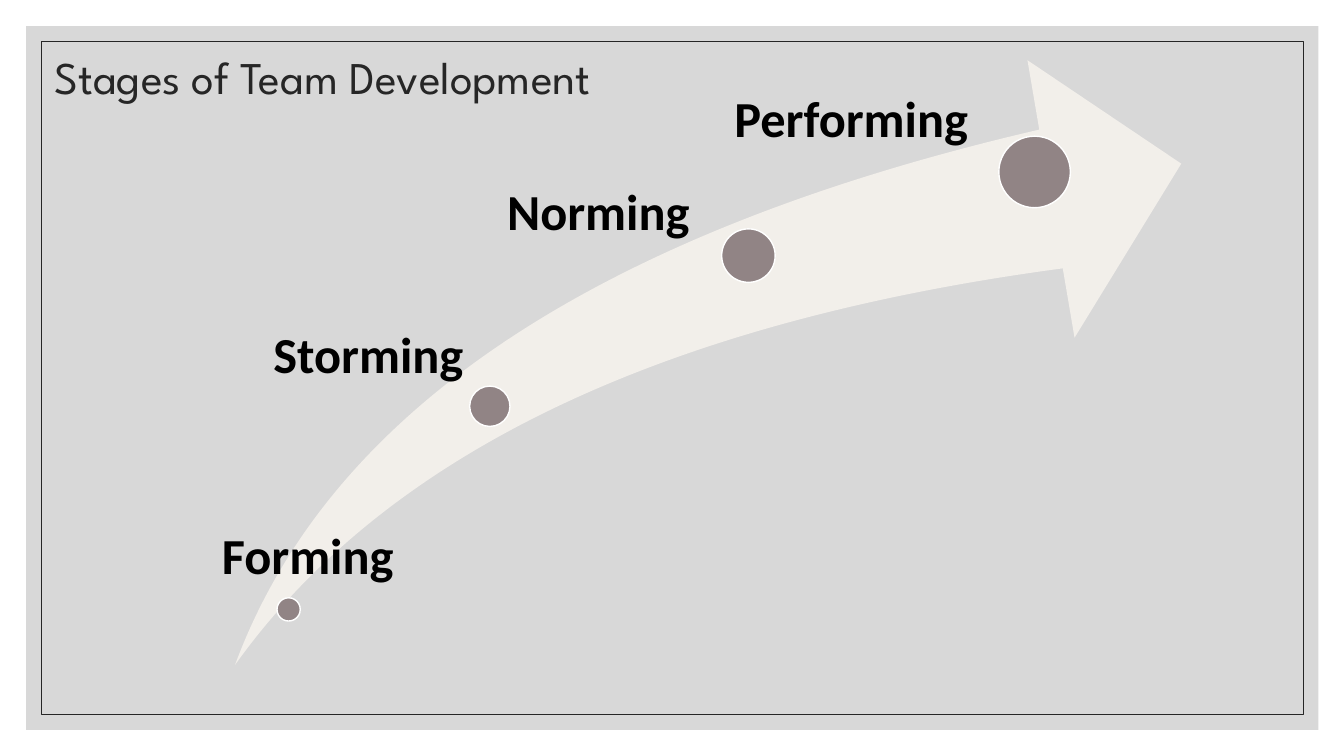
from lxml.etree import SubElement
from pptx import Presentation
from pptx.dml.color import RGBColor
from pptx.enum.shapes import MSO_SHAPE
from pptx.enum.text import MSO_ANCHOR, MSO_AUTO_SIZE, PP_ALIGN
from pptx.oxml.ns import qn
from pptx.util import Pt

COLORS = {
    "panel": "BFBFBF",
    "title": "262626",
    "arrow": "F2EFEA",
    "dot": "918485",
    "ring": "FFFFFF",
    "label": "000000",
}
PANEL_OPACITY = 60
INSET_PER_DIAMETER = 0.53

# name, dot centre, dot diameter, label box: all relative to the arrow's box
STAGES = [
    ("Forming", (50, 379.1), 16.6, (-6.5, 323.3, 198.7, 41)),
    ("Storming", (193.7, 234), 28.8, (23.8, 179.3, 204.5, 46)),
    ("Norming", (378.4, 126.4), 38.2, (185.8, 77, 211, 65.5)),
    ("Performing", (582.8, 66.6), 51.1, (341.3, 10.8, 237.6, 56.9)),
]


def color(name):
    return RGBColor.from_string(COLORS[name])


def add_figure(slide, preset, box, fill=None, line=None, weight=1):
    figure = slide.shapes.add_shape(preset, *map(Pt, box))
    figure.shadow.inherit = False
    if fill:
        figure.fill.solid()
        figure.fill.fore_color.rgb = color(fill)
    else:
        figure.fill.background()
    if line:
        figure.line.color.rgb = color(line)
        figure.line.width = Pt(weight)
    else:
        figure.line.fill.background()
    return figure


def write_text(frame, text, font, size, ink, bold=False):
    frame.word_wrap = True
    frame.auto_size = MSO_AUTO_SIZE.NONE
    paragraph = frame.paragraphs[0]
    paragraph.alignment = PP_ALIGN.LEFT
    paragraph.line_spacing = 0.9
    run = paragraph.add_run()
    run.text = text
    run.font.name = font
    run.font.size = Pt(size)
    run.font.bold = bold
    run.font.color.rgb = color(ink)


def add_backdrop(slide, box, gap):
    left, top, width, height = box
    panel = add_figure(slide, MSO_SHAPE.RECTANGLE, box, fill="panel")
    tint = panel.element.spPr.find(qn("a:solidFill"))[0]
    SubElement(tint, qn("a:alpha"), val=str(PANEL_OPACITY * 1000))
    border = (left + gap, top + gap, width - 2 * gap, height - 2 * gap)
    add_figure(slide, MSO_SHAPE.RECTANGLE, border, line="title", weight=0.5)


def add_title(slide, box):
    title = slide.shapes.title
    slide.shapes.element.append(title.element)
    title.left, title.top, title.width, title.height = map(Pt, box)
    title.text_frame.vertical_anchor = MSO_ANCHOR.MIDDLE
    write_text(title.text_frame, "Stages of Team Development",
               "League Spartan", 32.4, "title")


def add_stage(slide, origin, name, center, diameter, label_box):
    left, top = origin
    x, y = center
    dot_box = (left + x - diameter / 2, top + y - diameter / 2, diameter, diameter)
    add_figure(slide, MSO_SHAPE.OVAL, dot_box, fill="dot", line="ring")

    label_x, label_y, width, height = label_box
    label = slide.shapes.add_textbox(
        Pt(left + label_x), Pt(top + label_y), Pt(width), Pt(height))
    frame = label.text_frame
    frame.margin_left = Pt(diameter * INSET_PER_DIAMETER)
    frame.margin_top = frame.margin_right = frame.margin_bottom = 0
    write_text(frame, name, "Calibri", 36, "label", bold=True)


def add_growth_arrow(slide, box):
    arrow = add_figure(slide, MSO_SHAPE.SWOOSH_ARROW, box, fill="arrow")
    arrow.adjustments[0] = 0.25
    arrow.adjustments[1] = 0.25
    arrow.rotation = 356.8
    for stage in STAGES:
        add_stage(slide, box[:2], *stage)


def main():
    deck = Presentation()
    deck.slide_width, deck.slide_height = Pt(960), Pt(540)
    slide = deck.slides.add_slide(deck.slide_layouts[5])
    add_backdrop(slide, (18.7, 18.7, 923, 502.6), gap=10.8)
    add_title(slide, (31.7, 24.5, 504.7, 65.5))
    add_growth_arrow(slide, (156.2, 56.2, 694.8, 399.6))
    deck.save("out.pptx")


if __name__ == "__main__":
    main()
